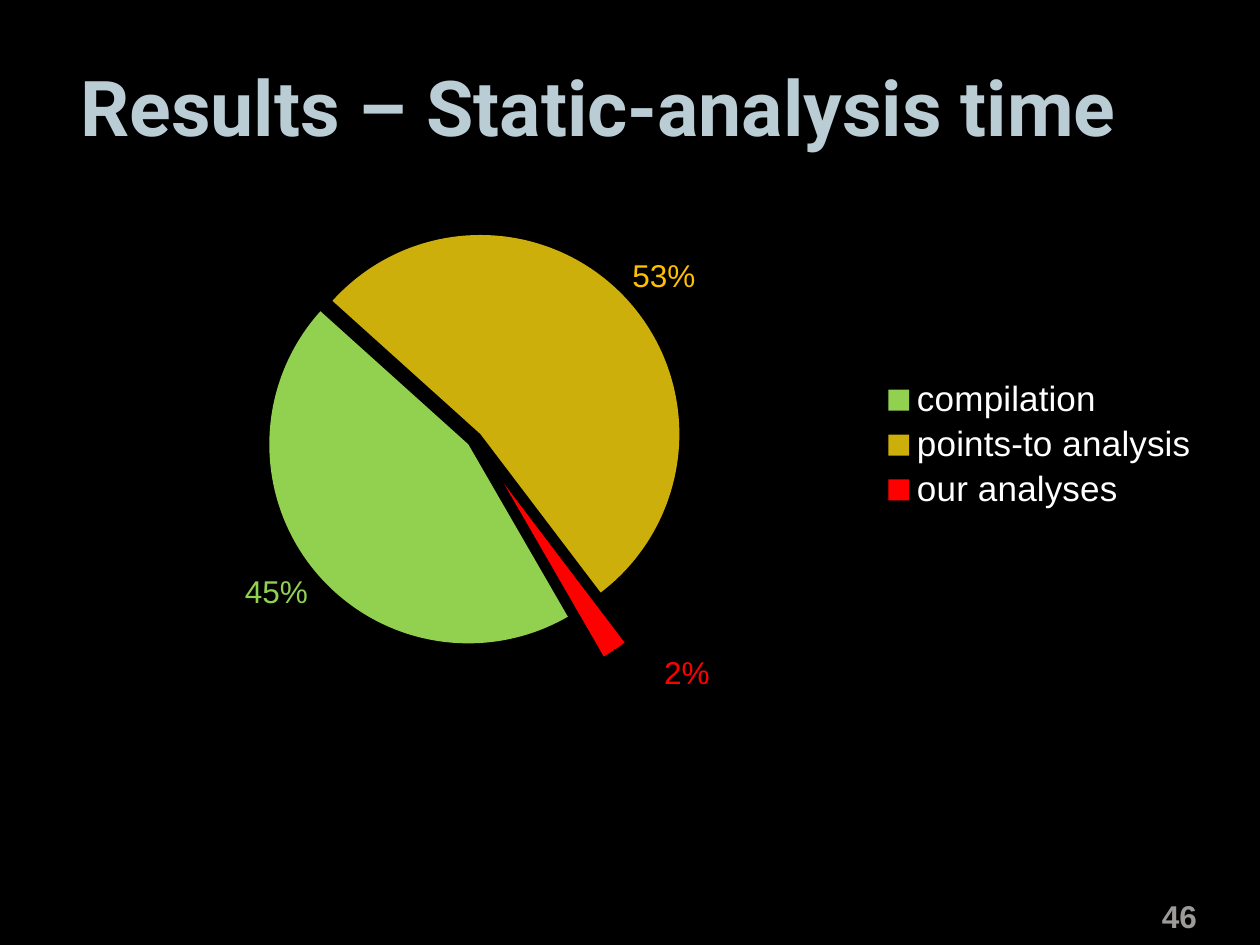
from lxml import etree
from pptx import Presentation
from pptx.chart.data import CategoryChartData
from pptx.dml.color import RGBColor
from pptx.enum.chart import XL_CHART_TYPE, XL_LABEL_POSITION, XL_LEGEND_POSITION
from pptx.enum.text import MSO_ANCHOR, PP_ALIGN
from pptx.oxml.ns import qn
from pptx.util import Inches, Pt

PIE = XL_CHART_TYPE.PIE
OUTSIDE = XL_LABEL_POSITION.OUTSIDE_END
LEGEND_RIGHT = XL_LEGEND_POSITION.RIGHT
TOP, BOTTOM = MSO_ANCHOR.TOP, MSO_ANCHOR.BOTTOM
LEFT, RIGHT = PP_ALIGN.LEFT, PP_ALIGN.RIGHT

COLORS = {
    "background": "000000", "title": "BACDD4", "number": "9D9B9A",
    "text": "FFFFFF", "green": "92D050", "gold": "CCAF0A",
    "amber": "FFC000", "red": "FF0000",
}
# category, percent, slice colour, label colour, explosion in percent
SLICES = [
    ("compilation", 45, "green", "green", 4),
    ("points-to analysis", 53, "gold", "amber", 4),
    ("our analyses", 2, "red", "red", 27),
]
EDGES = {"xMode": "edge", "yMode": "edge"}


def color(name):
    return RGBColor.from_string(COLORS[name])


def set_font(font, name, size, color_name, bold=False):
    font.name, font.size, font.bold = name, Pt(size), bold
    font.color.rgb = color(color_name)


def add_line(s, box, text, font, align=LEFT, anchor=TOP, margins=(0.1, 0.05)):
    tf = s.shapes.add_textbox(*map(Inches, box)).text_frame
    tf.word_wrap = True
    tf.vertical_anchor = anchor
    tf.margin_left = tf.margin_right = Inches(margins[0])
    tf.margin_top = tf.margin_bottom = Inches(margins[1])
    p = tf.paragraphs[0]
    p.alignment = align
    r = p.add_run()
    r.text = text
    set_font(r.font, *font)


def set_layout(parent, index, **settings):
    """Place a chart part by hand, in fractions of the chart box."""
    for old in parent.findall(qn("c:layout")):
        parent.remove(old)
    layout = etree.Element(qn("c:layout"))
    parent.insert(index, layout)
    manual = etree.SubElement(layout, qn("c:manualLayout"))
    for tag, val in settings.items():
        etree.SubElement(manual, qn(f"c:{tag}"), val=str(val))


def style_slice(series, i, fill, label_color, explosion):
    point = series.points[i]
    point.format.fill.solid()
    point.format.fill.fore_color.rgb = color(fill)
    point.format.line.fill.background()
    dpt = series._element.findall(qn("c:dPt"))[i]
    explode = etree.Element(qn("c:explosion"), val=str(explosion))
    dpt.find(qn("c:spPr")).addprevious(explode)

    label = point.data_label
    set_font(label.font, "Arial", 18, label_color)
    label.position = OUTSIDE
    label._dLbl.find(qn("c:showVal")).set("val", "0")
    label._dLbl.find(qn("c:showPercent")).set("val", "1")


def add_time_pie(s, box):
    data = CategoryChartData()
    data.categories = [row[0] for row in SLICES]
    data.add_series("Series 1", [row[1] for row in SLICES])
    chart = s.shapes.add_chart(PIE, *map(Inches, box), data).chart
    set_font(chart.font, "Arial", 18, "text")
    chart.has_title = False
    set_layout(chart._chartSpace.chart.plotArea, 0, layoutTarget="inner",
               **EDGES, x=0.18, y=0.13, w=0.35, h=0.71)

    # Legend
    chart.has_legend = True
    legend = chart.legend
    legend.position = LEGEND_RIGHT
    legend.include_in_layout = False
    set_font(legend.font, "Arial", 20, "text")
    set_layout(legend._element, 1, **EDGES, x=0.71, y=0.37, w=0.28, h=0.25)

    # Slices and their labels
    plot = chart.plots[0]
    plot.vary_by_categories = True
    series = plot.series[0]
    labels = series.data_labels
    labels.show_percentage, labels.show_value = True, False
    labels.position = OUTSIDE
    for i, (_, _, *style) in enumerate(SLICES):
        style_slice(series, i, *style)

    # Move the label of the thin slice to the right
    set_layout(series.points[2].data_label._dLbl, 1, x=0.04, y=0)

    # Turn the first slice to start at 150 degrees
    pie = plot._element
    angle = pie.find(qn("c:firstSliceAng"))
    if angle is None:
        angle = etree.SubElement(pie, qn("c:firstSliceAng"))
    angle.set("val", "150")


def main():
    prs = Presentation()
    prs.slide_width, prs.slide_height = Inches(10), Inches(7.5)
    s = prs.slides.add_slide(prs.slide_layouts[6])
    s.background.fill.solid()
    s.background.fill.fore_color.rgb = color("background")

    add_line(s, (8.67, 7.02, 0.83, 0.4), "46", ("Arial", 18, "number", True),
             RIGHT, BOTTOM, (0, 0))
    add_line(s, (0.54, 0.42, 8.98, 0.84), "Results – Static-analysis time",
             ("Roboto", 44, "title", True))
    add_time_pie(s, (0.55, 1.33, 9.06, 4.45))
    prs.save("out.pptx")


if __name__ == "__main__":
    main()
